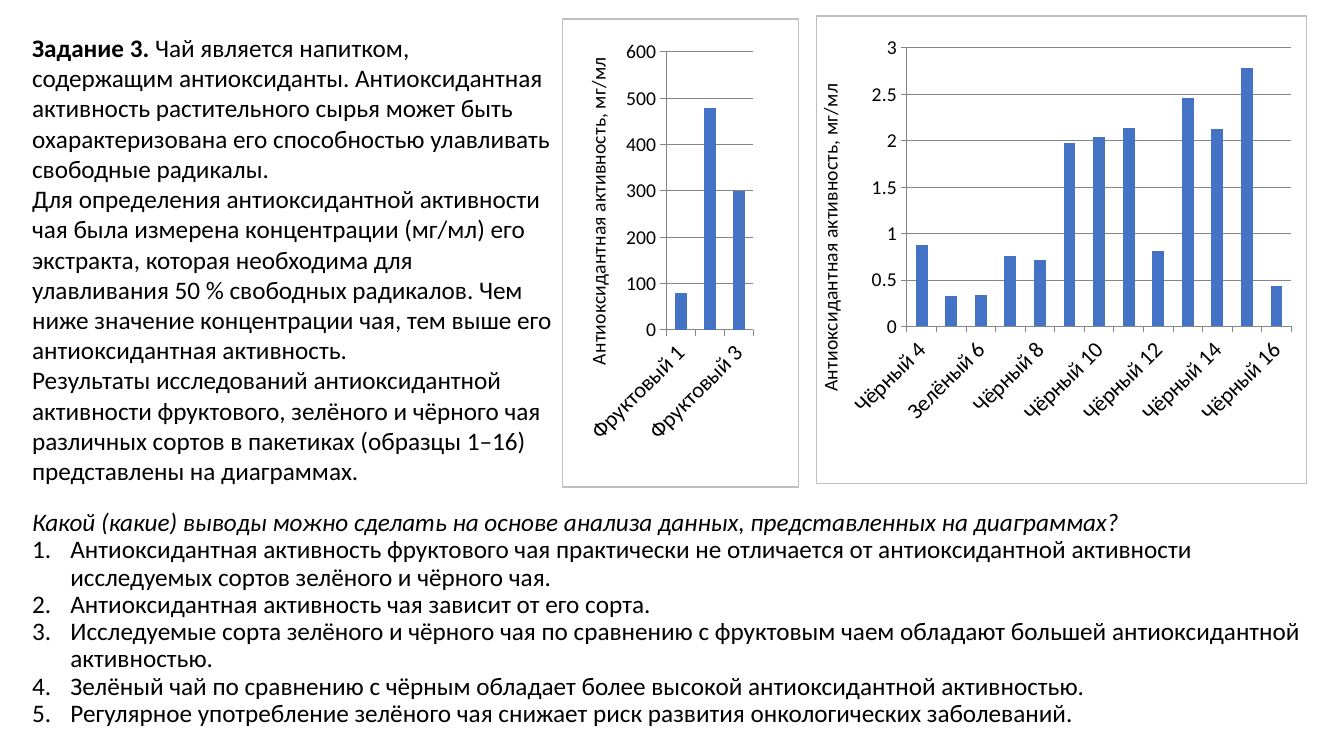
from lxml import etree
from pptx import Presentation
from pptx import util as u
from pptx.chart.data import CategoryChartData
from pptx.dml.color import RGBColor
from pptx.enum import chart as ch, shapes, text
from pptx.oxml import parse_xml
from pptx.oxml.ns import nsdecls, qn

HUES = {"ink": "000000", "bar": "4472C4", "grid": "868686", "frame": "BFBFBF"}
FONT = "Calibri"
TITLE = "Антиоксидантная активность, мг/мл"

INTRO = [
    ("Задание 3.", " Чай является напитком, содержащим антиоксиданты. "
     "Антиоксидантная активность растительного сырья может быть охарактеризована "
     "его способностью улавливать свободные радикалы."),
    ("", "Для определения антиоксидантной активности чая была измерена концентрации "
     "(мг/мл) его экстракта, которая необходима для улавливания 50 % свободных "
     "радикалов. Чем ниже значение концентрации чая, тем выше его антиоксидантная "
     "активность."),
    ("", "Результаты исследований антиоксидантной активности фруктового, зелёного и "
     "чёрного чая различных сортов в пакетиках (образцы 1–16) представлены на "
     "диаграммах."),
]
ASK = ("Какой (какие) выводы можно сделать на основе анализа данных, "
       "представленных на диаграммах?")
CLAIMS = [
    "Антиоксидантная активность фруктового чая практически не отличается от "
    "антиоксидантной активности исследуемых сортов зелёного и чёрного чая.",
    "Антиоксидантная активность чая зависит от его сорта.",
    "Исследуемые сорта зелёного и чёрного чая по сравнению с фруктовым чаем обладают "
    "большей антиоксидантной активностью.",
    "Зелёный чай по сравнению с чёрным обладает более высокой антиоксидантной "
    "активностью.",
    "Регулярное употребление зелёного чая снижает риск развития онкологических "
    "заболеваний.",
]
FRUIT = {f"Фруктовый {n}": val for n, val in enumerate([80, 480, 300], 1)}
GREEN = {6, 9, 15}
LEAF = {
    f"{'Зелёный' if n in GREEN else 'Чёрный'} {n}": val
    for n, val in enumerate([0.88, 0.33, 0.34, 0.76, 0.72, 1.98, 2.04, 2.14,
                             0.81, 2.46, 2.13, 2.78, 0.44], 4)
}


def hue(name):
    """Return a named colour."""
    return RGBColor.from_string(HUES[name])


def put(item, **vals):
    """Set several attributes of an object."""
    for key, val in vals.items():
        setattr(item, key, val)


def style(font, size, **vals):
    """Give a font its face, size, colour and emphasis."""
    put(font, name=FONT, size=u.Pt(size), **vals)
    font.color.rgb = hue("ink")


def write(para, words, **vals):
    """Add a run of body text."""
    run = para.add_run()
    run.text = words
    style(run.font, 18, **vals)


def add_box(slide, area, count):
    """Add a text box and return its paragraphs."""
    frame = slide.shapes.add_textbox(*map(u.Inches, area)).text_frame
    put(frame, word_wrap=True, auto_size=text.MSO_AUTO_SIZE.SHAPE_TO_FIT_TEXT)
    for _ in range(count - 1):
        frame.add_paragraph()
    return frame.paragraphs


def number(para):
    """Turn a paragraph into a numbered item."""
    props = para._p.get_or_add_pPr()
    indent = u.Inches(0.38)
    props.set("marL", str(indent))
    props.set("indent", str(-indent))
    etree.SubElement(props, qn("a:buFont"), typeface="+mj-lt")
    etree.SubElement(props, qn("a:buAutoNum"), type="arabicPeriod")


def place(node, index, inner=False, **spots):
    """Fix the layout of a chart part by fractions of the chart."""
    for old in node.findall(qn("c:layout")):
        node.remove(old)
    tags = '<c:layoutTarget val="inner"/>' if inner else ""
    tags += "".join(f'<c:{key}Mode val="edge"/>' for key in "xy")
    tags += "".join(f'<c:{key} val="{val}"/>' for key, val in spots.items())
    node.insert(index, parse_xml(
        f'<c:layout {nsdecls("c")}><c:manualLayout>{tags}</c:manualLayout></c:layout>'))


def turn(body, angle):
    """Rotate chart text by degrees."""
    body.set("rot", str(angle * 60000))
    body.set("vert", "horz")


def add_bars(slide, area, teas, top, step, plot, spot):
    """Add a column chart of tea activity."""
    data = CategoryChartData()
    data.categories = list(teas)
    data.add_series("Series 1", list(teas.values()))
    chart = slide.shapes.add_chart(
        ch.XL_CHART_TYPE.COLUMN_CLUSTERED, *map(u.Inches, area), data).chart
    put(chart, has_legend=False, has_title=False)
    style(chart.font, 10)
    put(chart.plots[0], gap_width=150, vary_by_categories=False)
    fill = chart.plots[0].series[0].format.fill
    fill.solid()
    fill.fore_color.rgb = hue("bar")
    cat, val = chart.category_axis, chart.value_axis
    for axis, size in ((cat, 16), (val, 14)):
        put(axis, major_tick_mark=ch.XL_TICK_MARK.OUTSIDE,
            minor_tick_mark=ch.XL_TICK_MARK.NONE)
        style(axis.tick_labels.font, size)
        axis.format.line.color.rgb = hue("grid")
    turn(cat._element.txPr.bodyPr, -45)
    put(val, minimum_scale=0, maximum_scale=top, major_unit=step,
        has_major_gridlines=True)
    val.major_gridlines.format.line.color.rgb = hue("grid")
    title = val.axis_title
    frame = title.text_frame
    frame.text = TITLE
    style(frame.paragraphs[0].runs[0].font, 14, bold=False)
    turn(frame._txBody.bodyPr, -90)
    place(title._element, 1, **dict(zip("xy", spot)))
    place(chart._chartSpace.chart.plotArea, 0, True, **dict(zip("xywh", plot)))


def add_frame(slide, area):
    """Add an unfilled outline."""
    box = slide.shapes.add_shape(shapes.MSO_SHAPE.RECTANGLE, *map(u.Inches, area))
    box.shadow.inherit = False
    box.fill.background()
    box.line.color.rgb = hue("frame")
    box.line.width = u.Pt(1)


def main():
    """Build the tea task slide."""
    deck = Presentation()
    put(deck, slide_width=u.Inches(13.33), slide_height=u.Inches(7.5))
    slide = deck.slides.add_slide(deck.slide_layouts[6])

    for para, (lead, rest) in zip(add_box(slide, (0.22, 0.27, 5.36, 4.64), 3), INTRO):
        if lead:
            write(para, lead, bold=True)
        write(para, rest)

    add_bars(slide, (5.42, 0.27, 2.85, 4.38), FRUIT, 600, 100,
             (0.417, 0.056, 0.303, 0.63), (0.12, 0.06))
    add_bars(slide, (7.75, 0.27, 5.21, 4.38), LEAF, 3, 0.5,
             (0.239, 0.047, 0.732, 0.631), (0.06, 0.12))

    paras = add_box(slide, (0.22, 5.01, 12.9, 2.28), 1 + len(CLAIMS))
    for para in paras:
        para.line_spacing = 0.9
    write(paras[0], ASK, italic=True)
    for para, claim in zip(paras[1:], CLAIMS):
        number(para)
        write(para, claim)

    add_frame(slide, (5.58, 0.19, 2.34, 4.64))
    add_frame(slide, (8.1, 0.16, 4.86, 4.64))
    deck.save("out.pptx")


if __name__ == "__main__":
    main()
